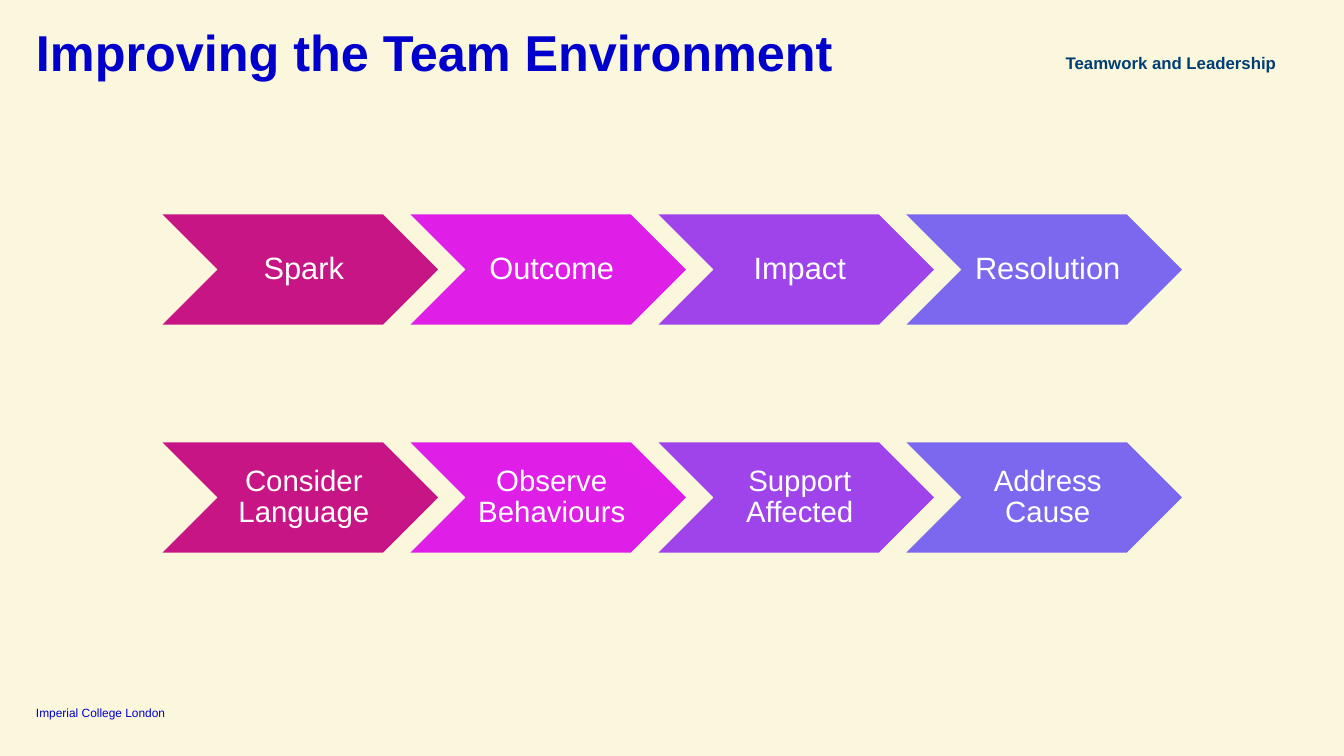
from lxml.etree import SubElement as Sub
from pptx import Presentation
from pptx.dml.color import RGBColor as Rgb
from pptx.enum.shapes import MSO_SHAPE as Shape
from pptx.enum.text import MSO_ANCHOR as Anchor, MSO_AUTO_SIZE as Fit, PP_ALIGN as Align
from pptx.oxml.ns import qn
from pptx.util import Pt

INK = {
    "page": "FBF7DC", "blue": "0000CD", "navy": "003E74", "white": "FFFFFF",
    "rose": "C71585", "pink": "DF1EE7", "plum": "9F43EA", "slate": "7B68EE",
}


class Deck:
    """Holds the style and the current slide."""

    font = "Arial"

    def __init__(self, wide, high):
        self.prs = Presentation()
        self.prs.slide_width, self.prs.slide_height = Pt(wide), Pt(high)
        self.slide = self.prs.slides.add_slide(self.prs.slide_layouts[1])
        self.paint(self.slide.background.fill, "page")

    def paint(self, fill, ink):
        fill.solid()
        fill.fore_color.rgb = Rgb.from_string(INK[ink])

    def letter(self, shape, text, size, ink, bold=False, align=Align.LEFT,
               line=1.0, anchor=Anchor.TOP, pad=(0, 0, 0, 0)):
        frame = shape.text_frame
        frame.text = text
        frame.word_wrap = True
        frame.auto_size = Fit.NONE
        frame.vertical_anchor = anchor
        (frame.margin_left, frame.margin_top,
         frame.margin_right, frame.margin_bottom) = map(Pt, pad)
        para = frame.paragraphs[0]
        para.alignment, para.line_spacing = align, line
        para.space_before = Pt(0)
        for run in para.runs:
            font = run.font
            font.name, font.size, font.bold = self.font, Pt(size), bold
            font.color.rgb = Rgb.from_string(INK[ink])

    def place(self, shape, box):
        shape.left, shape.top, shape.width, shape.height = map(Pt, box)

    def title(self, text, box):
        shape = self.slide.shapes.title
        self.place(shape, box)
        self.letter(shape, text, 36, "blue", bold=True, line=0.9)

    def topic(self, text, box):
        shape = self.slide.placeholders[1]
        self.place(shape, box)
        self.letter(shape, text, 12, "navy", bold=True, align=Align.RIGHT, line=1.05)
        # No bullet and no hanging indent
        props = shape.text_frame.paragraphs[0]._p.get_or_add_pPr()
        props.set("marL", "0")
        props.set("indent", "0")
        Sub(props, qn("a:buNone"))

    def label(self, text, box):
        shape = self.slide.shapes.add_textbox(*map(Pt, box))
        self.letter(shape, text, 8.5, "blue", anchor=Anchor.BOTTOM)

    def step(self, text, box, ink, size):
        shape = self.slide.shapes.add_shape(Shape.CHEVRON, *map(Pt, box))
        shape.shadow.inherit = False
        self.paint(shape.fill, ink)
        shape.line.fill.background()
        self.letter(shape, text, size, "white", align=Align.CENTER, line=0.9,
                    anchor=Anchor.MIDDLE, pad=(7, 2, 2, 2))

    def chain(self, steps, top, size):
        left, pitch, wide, high = 116.1, 177.12, 196.8, 78.7
        inks = ("rose", "pink", "plum", "slate")
        for i, (text, ink) in enumerate(zip(steps, inks)):
            self.step(text, (left + i * pitch, top, wide, high), ink, size)


def main():
    deck = Deck(960, 540)

    # Heading and footer
    deck.title("Improving the Team Environment", (25.7, 20.2, 908.6, 29.5))
    deck.topic("Teamwork and Leadership", (665.7, 36.7, 246, 24.5))
    deck.label("Imperial College London", (25.7, 503.3, 111.6, 10.8))

    # Stages, and the action for each
    deck.chain(("Spark", "Outcome", "Impact", "Resolution"), 153.2, 22)
    deck.chain(("Consider Language", "Observe Behaviours",
                "Support Affected", "Address Cause"), 316, 21)

    deck.prs.save("out.pptx")


if __name__ == "__main__":
    main()
